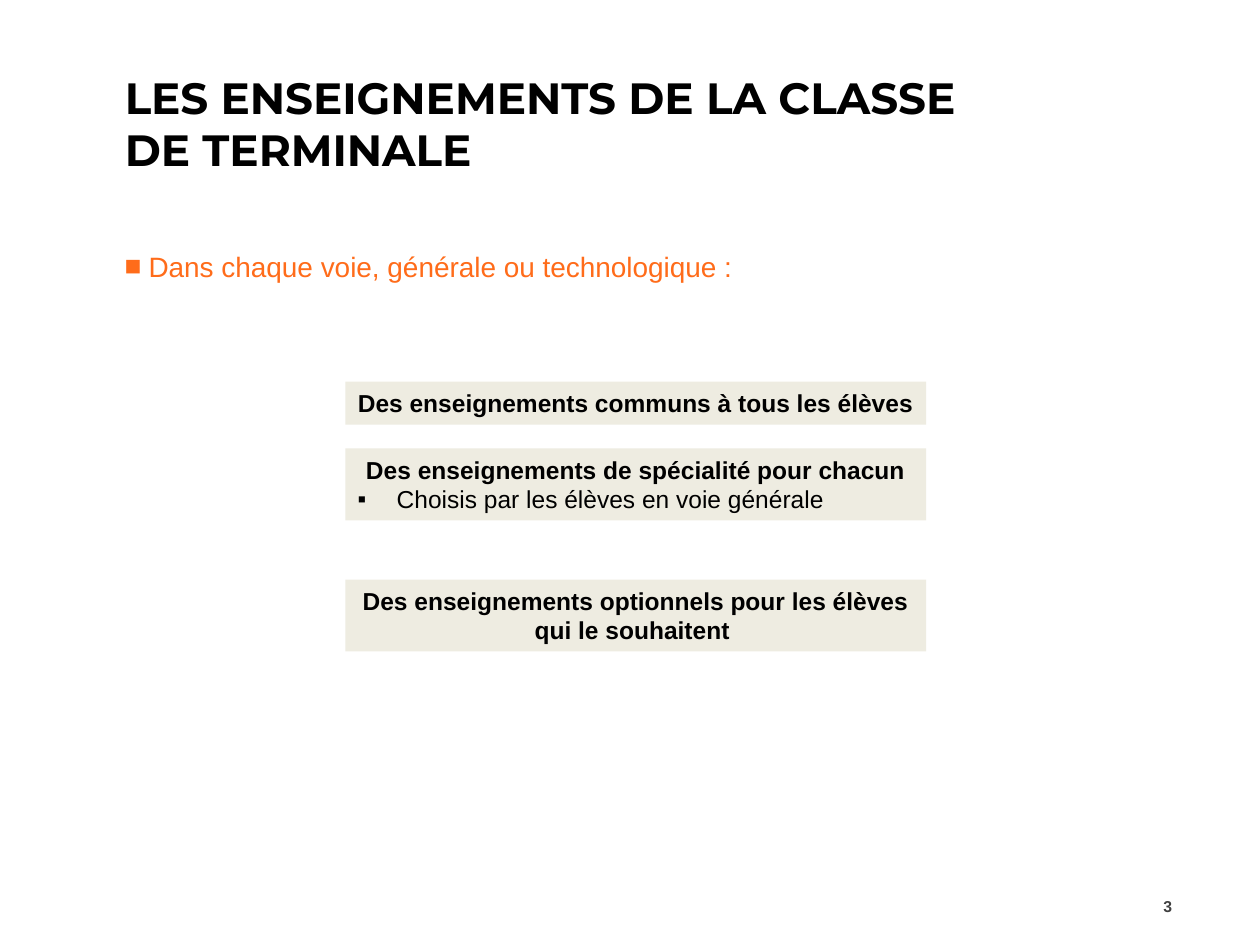
"""Builds the slide on the courses of the final school year."""
from lxml.etree import SubElement
from pptx import Presentation
from pptx.dml.color import RGBColor
from pptx.enum.shapes import MSO_SHAPE
from pptx.enum.text import MSO_ANCHOR, MSO_AUTO_SIZE, PP_ALIGN
from pptx.oxml.ns import qn
from pptx.util import Inches, Pt

HUES = {"ink": "000000", "accent": "FF6C1A", "sand": "EEECE1", "grey": "404040"}


def write(para, text, size=14, font="Arial", hue="ink", bold=False,
          align=PP_ALIGN.LEFT, mark=None, dent=0):
    para.text = text
    para.alignment = align
    if mark:
        props = para._p.get_or_add_pPr()
        props.set("marL", str(Inches(dent)))
        props.set("indent", str(-Inches(dent)))
        SubElement(props, qn("a:buFont"), typeface="Arial")
        SubElement(props, qn("a:buChar"), char=mark)
    para.font.size = Pt(size)
    para.font.name = font
    para.font.bold = bold
    para.font.color.rgb = RGBColor.from_string(HUES[hue])


deck = Presentation()
deck.slide_width, deck.slide_height = Inches(10), Inches(7.5)
slide = deck.slides.add_slide(deck.slide_layouts[5])
shapes = slide.shapes
left, wide = Inches(0.89), Inches(8.62)

title = shapes.title
title.left, title.top = left, Inches(0.51)
title.width, title.height = wide, Inches(1.29)
frame = title.text_frame
frame.word_wrap = True
frame.auto_size = MSO_AUTO_SIZE.NONE
frame.vertical_anchor = MSO_ANCHOR.TOP
write(frame.paragraphs[0], "LES ENSEIGNEMENTS DE LA CLASSE \vDE TERMINALE",
      size=25, font="Montserrat", bold=True)

intro = shapes.add_textbox(left, Inches(1.93), wide, Inches(0.36)).text_frame
intro.word_wrap = True
write(intro.paragraphs[0], "Dans chaque voie, générale ou technologique :",
      size=16, hue="accent", mark="■", dent=0.19)

page = shapes.add_textbox(Inches(8.91), Inches(6.99), Inches(0.49), Inches(0.4)).text_frame
page.word_wrap = True
page.vertical_anchor = MSO_ANCHOR.MIDDLE
write(page.paragraphs[0], "3", size=9, hue="grey", bold=True, align=PP_ALIGN.RIGHT)

cards = [
    (3.03, 0.34, "Des enseignements communs à tous les élèves ", None),
    (3.56, 0.57, "Des enseignements de spécialité pour chacun",
     "Choisis par les élèves en voie générale"),
    (4.6, 0.57, "Des enseignements optionnels pour les élèves qui le souhaitent ", None),
]
for top, high, head, note in cards:
    card = shapes.add_shape(MSO_SHAPE.RECTANGLE, Inches(2.74), Inches(top),
                            Inches(4.61), Inches(high))
    card.shadow.inherit = False
    card.fill.solid()
    card.fill.fore_color.rgb = RGBColor.from_string(HUES["sand"])
    card.line.fill.background()
    frame = card.text_frame
    frame.word_wrap = True
    frame.auto_size = MSO_AUTO_SIZE.SHAPE_TO_FIT_TEXT
    frame.vertical_anchor = MSO_ANCHOR.TOP
    write(frame.paragraphs[0], head, bold=True, align=PP_ALIGN.CENTER)
    if note:
        write(frame.add_paragraph(), note, mark="▪", dent=0.31)

deck.save("out.pptx")
